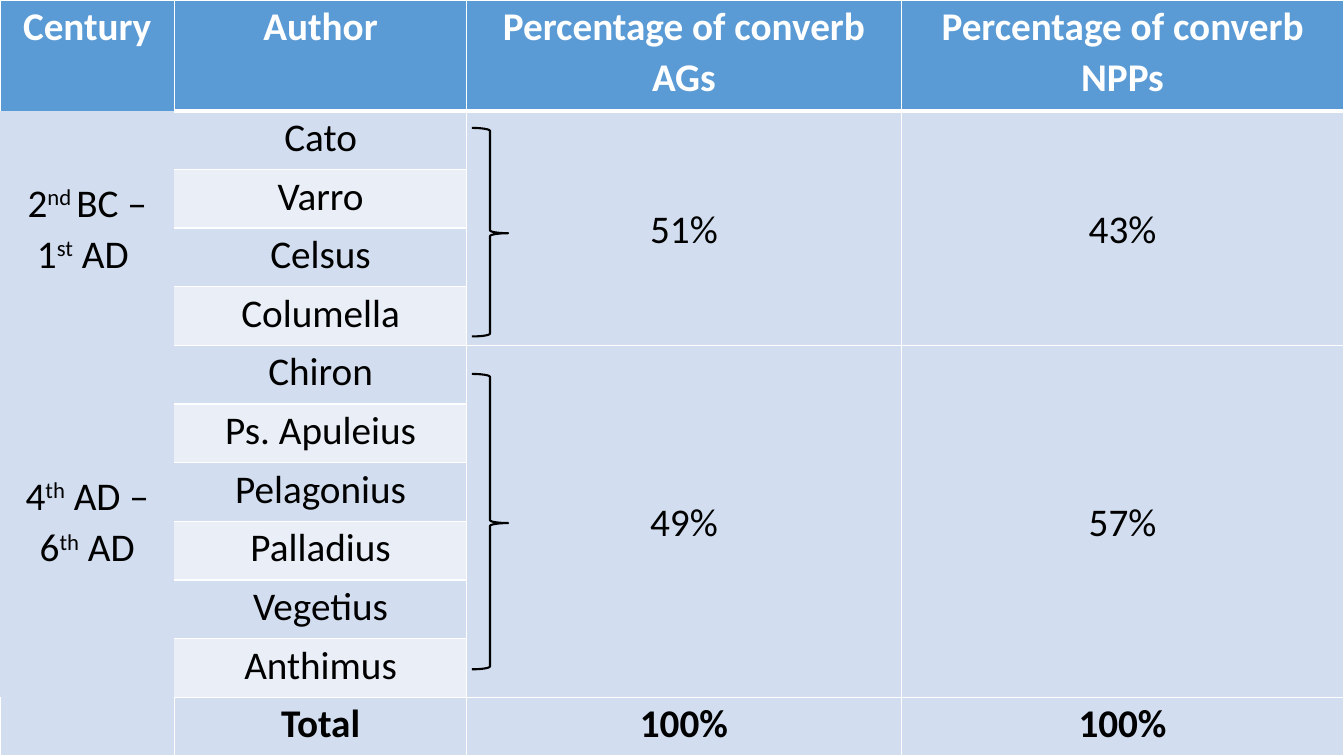
"""Build a slide comparing converb percentages of two author groups."""
from dataclasses import dataclass

from lxml.etree import SubElement
from pptx import Presentation
from pptx.dml.color import RGBColor
from pptx.enum.shapes import MSO_SHAPE as Preset
from pptx.enum.text import MSO_ANCHOR as Anchor, PP_ALIGN as Align
from pptx.oxml.ns import qn
from pptx.util import Pt

WHITE, BLACK = "FFFFFF", "000000"
HEADER_BLUE, DARK_BAND, LIGHT_BAND = "5B9BD5", "D2DEEF", "EAEFF7"
COLUMN_WIDTHS = (124.6, 208.8, 310.3, 316.3)
HEADER_HEIGHT, ROW_HEIGHT = 79.1, 41.9
HEADINGS = ("Century", "Author", "Percentage of converb AGs", "Percentage of converb NPPs")
TOTALS = ("", "Total", "100%", "100%")
NO_STYLE = "{2D5ABB26-0587-4C30-8999-92F81FD0307C}"


@dataclass(frozen=True)
class Period:
    century: str
    authors: tuple[str, ...]
    percentages: tuple[str, str]
    brace_top: float
    brace_height: float


PERIODS = (
    Period("2^nd ^BC – 1^st^ AD ", ("Cato", "Varro", "Celsus", "Columella"),
           ("51%", "43%"), 91.4, 149),
    Period("4^th^ AD – 6^th^ AD",
           ("Chiron", "Ps. Apuleius", "Pelagonius", "Palladius", "Vegetius", "Anthimus"),
           ("49%", "57%"), 267.1, 211),
)


def color(value: str) -> RGBColor:
    """Turn a hex string into a colour."""
    return RGBColor.from_string(value)


def write(paragraph, text: str, *, font_color: str = BLACK, bold: bool = False) -> None:
    """Write centred text; parts between carets are raised."""
    paragraph.alignment = Align.CENTER
    paragraph.line_spacing = 1.07
    for index, part in enumerate(text.split("^")):
        if not part:
            continue
        run = paragraph.add_run()
        run.text = part
        run.font.name, run.font.size, run.font.bold = "Calibri", Pt(28), bold
        run.font.color.rgb = color(font_color)
        if index % 2:
            run.font._element.set("baseline", "30000")


def set_borders(cell, widths: dict[str, float]) -> None:
    """Draw white borders on the given sides and clear the others."""
    properties = cell._tc.get_or_add_tcPr()
    for side in "LRTB":
        line = SubElement(properties, qn(f"a:ln{side}"))
        if side in widths:
            line.set("w", str(Pt(widths[side])))
            fill = SubElement(line, qn("a:solidFill"))
            SubElement(fill, qn("a:srgbClr")).set("val", WHITE)
        else:
            SubElement(line, qn("a:noFill"))


def format_cell(cell, text: str, *, fill: str = DARK_BAND, sides: str = "LRTB",
                top: float = 1, bottom: float = 1, anchor: Anchor = Anchor.TOP,
                font_color: str = BLACK, bold: bool = False) -> None:
    """Fill one table cell with text, colour and borders."""
    widths = {"L": 1, "R": 1, "T": top, "B": bottom}
    set_borders(cell, {side: widths[side] for side in sides})
    cell.fill.solid()
    cell.fill.fore_color.rgb = color(fill)
    cell.margin_left = cell.margin_right = Pt(5)
    cell.margin_top = cell.margin_bottom = Pt(0)
    cell.vertical_anchor = anchor
    write(cell.text_frame.paragraphs[0], text, font_color=font_color, bold=bold)


def add_period(table, period: Period, first_row: int) -> None:
    """Fill the rows of one period."""
    top = 3 if first_row == 1 else 1
    last_row = first_row + len(period.authors) - 1
    for column, text in ((0, period.century), *enumerate(period.percentages, 2)):
        cell = table.cell(first_row, column)
        cell.merge(table.cell(last_row, column))
        format_cell(cell, text, sides="LRTB" if column else "", top=top, anchor=Anchor.MIDDLE)
    for index, author in enumerate(period.authors):
        format_cell(table.cell(first_row + index, 1), author, sides="RTB",
                    fill=LIGHT_BAND if index % 2 else DARK_BAND, top=1 if index else top)


def add_brace(slide, period: Period) -> None:
    """Draw the brace beside the authors of one period."""
    shape = slide.shapes.add_shape(Preset.RIGHT_BRACE, Pt(337), Pt(period.brace_top),
                                   Pt(26), Pt(period.brace_height))
    shape.adjustments[0], shape.adjustments[1] = 0.08, 0.505
    shape.shadow.inherit = False
    shape.fill.background()
    shape.line.color.rgb = color(BLACK)
    shape.line.width = Pt(1.5)


def add_table(slide) -> None:
    """Add the table of centuries, authors and percentages."""
    row_count = 2 + sum(len(period.authors) for period in PERIODS)
    frame = slide.shapes.add_table(row_count, len(HEADINGS), Pt(0), Pt(0), Pt(960), Pt(540))
    table = frame.table
    table._tbl.tblPr.find(qn("a:tableStyleId")).text = NO_STYLE
    for column, width in zip(table.columns, COLUMN_WIDTHS):
        column.width = Pt(width)
    for index, row in enumerate(table.rows):
        row.height = Pt(ROW_HEIGHT if index else HEADER_HEIGHT)
    for column, (heading, total) in enumerate(zip(HEADINGS, TOTALS)):
        format_cell(table.cell(0, column), heading, fill=HEADER_BLUE, bottom=3,
                    sides="LRTB" if column else "LRT", font_color=WHITE, bold=True)
        format_cell(table.cell(row_count - 1, column), total,
                    sides="LRTB" if column else "LRB", bold=True)
    first_row = 1
    for period in PERIODS:
        add_period(table, period, first_row)
        first_row += len(period.authors)


def main() -> None:
    """Build and save the presentation."""
    presentation = Presentation()
    presentation.slide_width, presentation.slide_height = Pt(960), Pt(540)
    slide = presentation.slides.add_slide(presentation.slide_layouts[6])
    slide.background.fill.solid()
    slide.background.fill.fore_color.rgb = color("ADB9CA")
    add_table(slide)
    for period in PERIODS:
        add_brace(slide, period)
    presentation.save("out.pptx")


if __name__ == "__main__":
    main()
